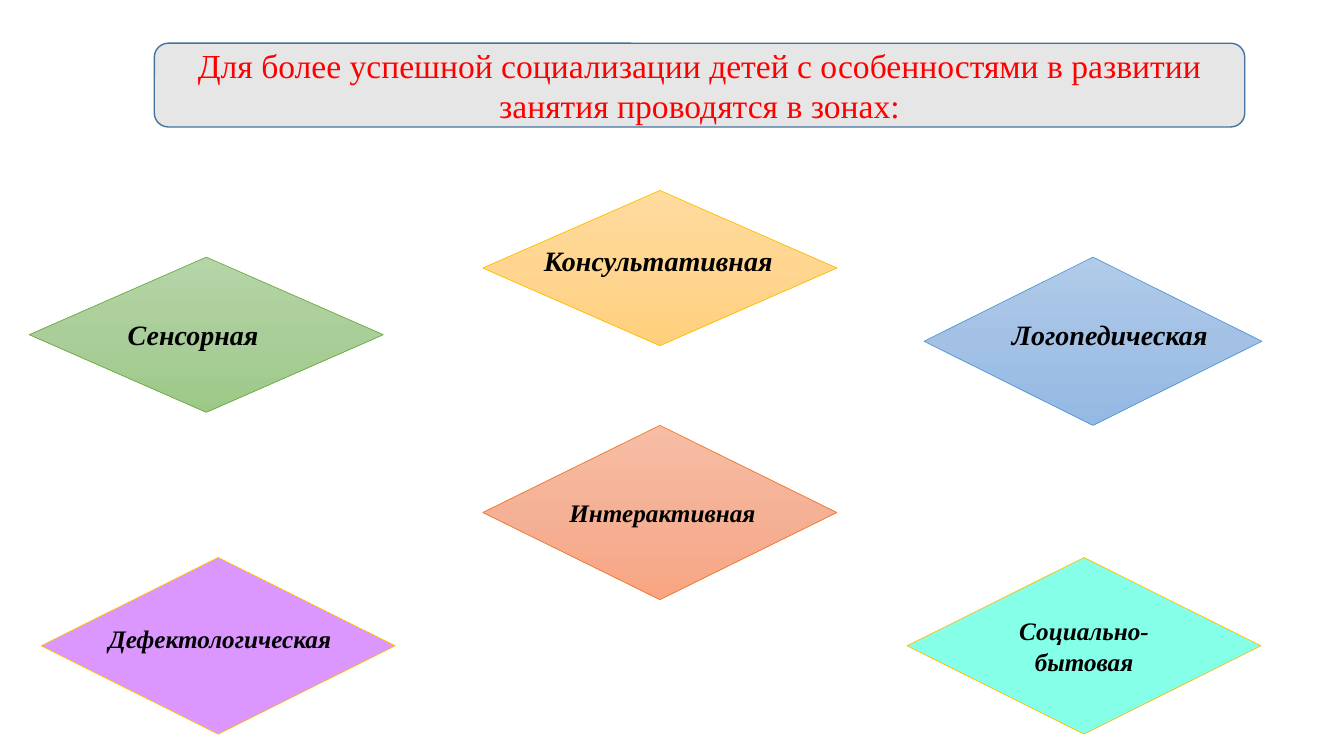
from copy import deepcopy

from pptx import Presentation
from pptx.dml.color import RGBColor
from pptx.enum.shapes import MSO_SHAPE as SHAPE
from pptx.enum.text import MSO_ANCHOR as ANCHOR, MSO_AUTO_SIZE as AUTO, PP_ALIGN as ALIGN
from pptx.oxml.ns import qn
from pptx.util import Cm, Pt

COLORS = {
    "red": "FF0000", "black": "000000", "grey": "E7E6E6", "navy": "43739E",
    "gold": "FFC000", "green": "70AD47", "orange": "ED7D31", "blue": "5B9BD5",
    "violet": "DC97FF", "aqua": "85FFE8",
    "gold_top": "FFDB9E", "gold_mid": "FFD590", "gold_end": "FFD07C",
    "green_top": "B5D5A7", "green_mid": "AACE9A", "green_end": "9CC987",
    "orange_top": "F7BDA5", "orange_mid": "F5B196", "orange_end": "F8A582",
    "blue_top": "B1CBE9", "blue_mid": "A3C1E5", "blue_end": "93B9E4",
}


def rgb(name):
    return RGBColor.from_string(COLORS[name])


class ZoneSlide:
    """Draws the styled elements of the zones slide."""

    font = "Times New Roman"

    def __init__(self, prs):
        self.slide = prs.slides.add_slide(prs.slide_layouts[6])

    def set_text(self, sp, text, size, color="black", align=ALIGN.LEFT, accent=True):
        p = sp.text_frame.paragraphs[0]
        p.text = text
        p.alignment = align
        p.font.name = self.font
        p.font.size = Pt(size)
        p.font.bold = p.font.italic = accent
        p.font.color.rgb = rgb(color)

    def shape(self, kind, box, line, width):
        sp = self.slide.shapes.add_shape(kind, *map(Cm, box))
        sp.shadow.inherit = False
        sp.line.color.rgb = rgb(line)
        sp.line.width = Pt(width)
        sp.text_frame.vertical_anchor = ANCHOR.MIDDLE
        return sp

    def title(self, box, text):
        sp = self.shape(SHAPE.ROUNDED_RECTANGLE, box, "navy", 1)
        sp.fill.solid()
        sp.fill.fore_color.rgb = rgb("grey")
        self.set_text(sp, text, 24, "red", ALIGN.CENTER, accent=False)

    def plain_diamond(self, box, color):
        sp = self.shape(SHAPE.DIAMOND, box, "gold", 0.5)
        sp.fill.solid()
        sp.fill.fore_color.rgb = rgb(color)
        return sp

    def gradient_diamond(self, box, color):
        sp = self.shape(SHAPE.DIAMOND, box, color, 0.5)
        sp.fill.gradient()
        sp.fill.gradient_angle = 270
        stops = next(sp._element.spPr.iter(qn("a:gsLst")))
        stops.insert(1, deepcopy(stops[0]))
        for i, (stop, part) in enumerate(zip(sp.fill.gradient_stops, ("top", "mid", "end"))):
            stop.position = i / 2
            stop.color.rgb = rgb(f"{color}_{part}")
        return sp

    def label(self, box, text, size, wrap=False):
        sp = self.slide.shapes.add_textbox(*map(Cm, box))
        sp.text_frame.word_wrap = wrap
        sp.text_frame.auto_size = AUTO.SHAPE_TO_FIT_TEXT
        self.set_text(sp, text, size)


def main():
    prs = Presentation()
    prs.slide_width, prs.slide_height = Cm(33.87), Cm(19.05)
    s = ZoneSlide(prs)
    s.title((3.89, 1.09, 27.48, 2.11),
            "Для более успешной социализации детей с особенностями в развитии "
            "занятия проводятся в зонах:")

    s.plain_diamond((1.04, 14.05, 8.92, 4.45), "violet")
    social = s.plain_diamond((22.86, 14.05, 8.92, 4.45), "aqua")
    s.set_text(social, "Социально-бытовая", 18, align=ALIGN.CENTER)

    s.gradient_diamond((12.17, 4.8, 8.92, 3.91), "gold")
    sensory = s.gradient_diamond((0.74, 6.48, 8.92, 3.91), "green")
    s.set_text(sensory, "Сенсорная", 20)
    s.gradient_diamond((12.17, 10.72, 8.92, 4.39), "orange")
    s.gradient_diamond((23.29, 6.48, 8.51, 4.24), "blue")

    s.label((2.49, 15.57, 6.65, 1.02), "Дефектологическая", 18, wrap=True)
    s.label((13.46, 6.02, 6.32, 1.12), "Консультативная", 20)
    s.label((25.25, 7.87, 5.49, 1.12), "Логопедическая", 20)
    s.label((14.1, 12.4, 5.26, 1.02), "Интерактивная", 18)
    prs.save("out.pptx")


if __name__ == "__main__":
    main()
